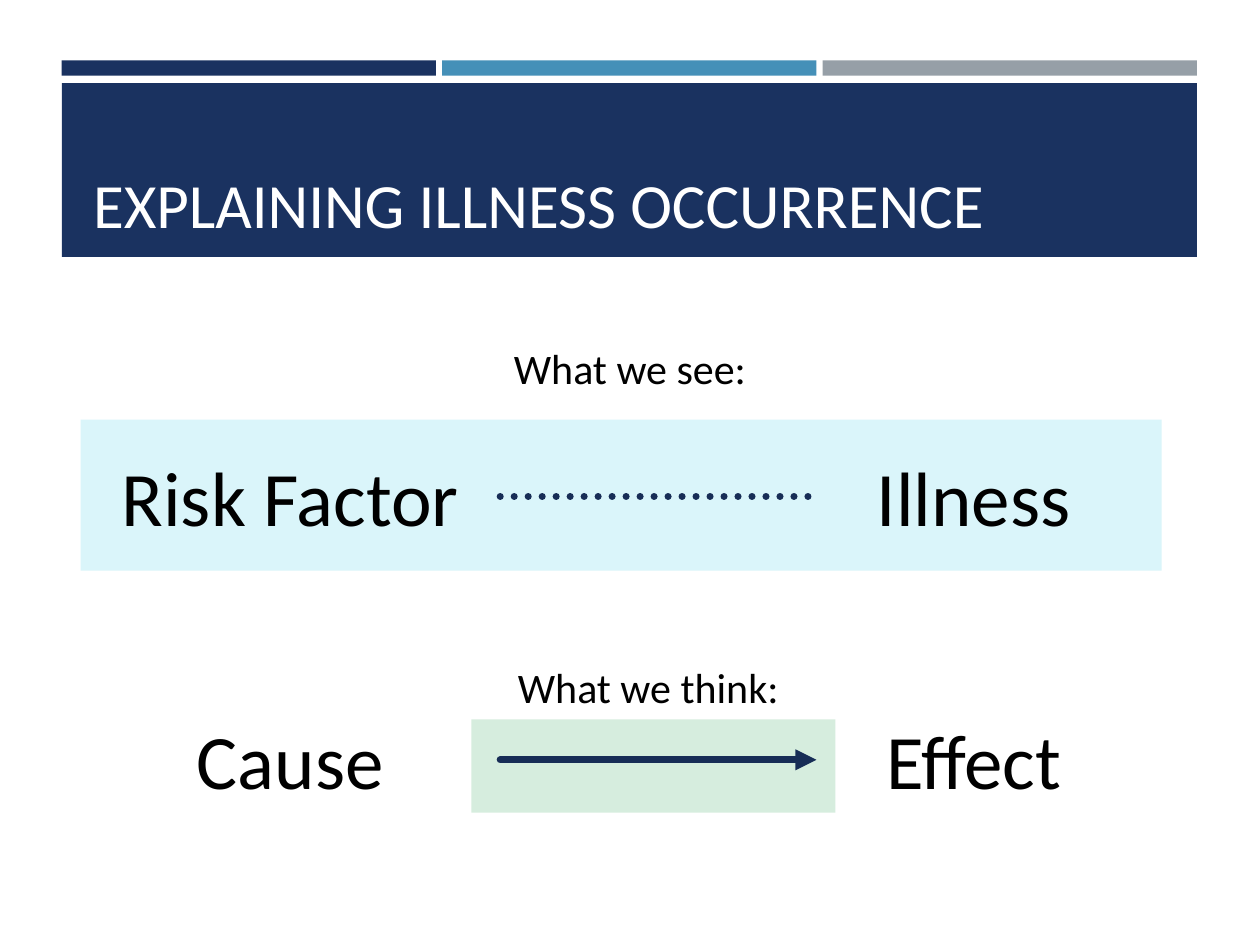
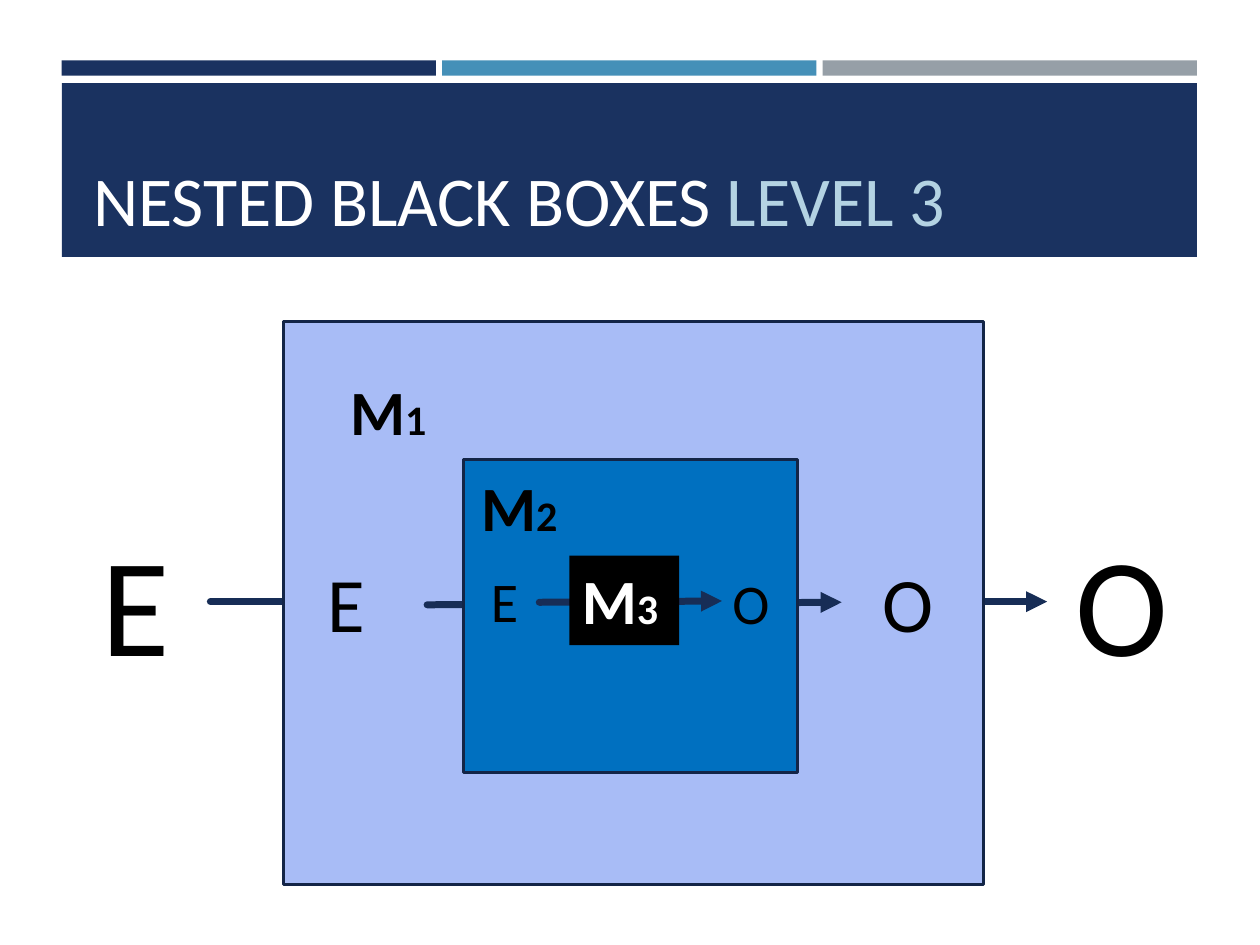
from lxml import etree
from pptx import Presentation
from pptx import util as u
from pptx.dml.color import RGBColor
from pptx.enum import dml, shapes, text
from pptx.oxml.ns import qn

PX = 9144  # EMU in one px, 100 px to the inch
FONT = "Calibri"

NAVY = RGBColor(0x1A, 0x32, 0x60)
BLUE = RGBColor(0x45, 0x90, 0xB8)
GREY = RGBColor(0x96, 0x9F, 0xA7)
LINE_NAVY = RGBColor(0x17, 0x2D, 0x56)
EDGE_NAVY = RGBColor(0x13, 0x25, 0x47)
PALE_CYAN = RGBColor(0xDA, 0xF5, 0xFA)
PALE_GREEN = RGBColor(0xD6, 0xED, 0xDE)
PERIWINKLE = RGBColor(0xA8, 0xBC, 0xF6)
STRONG_BLUE = RGBColor(0x00, 0x70, 0xC0)
PALE_BLUE = RGBColor(0xB4, 0xD3, 0xE3)
BLACK = RGBColor(0, 0, 0)
WHITE = RGBColor(255, 255, 255)

CENTER = text.PP_ALIGN.CENTER
LEFT = text.PP_ALIGN.LEFT


def px(*lengths):
    return [u.Emu(length * PX) for length in lengths]


def write(shape, runs, size, color=BLACK, bold=False, align=CENTER,
          anchor=text.MSO_ANCHOR.TOP, grow=True):
    """Fill a shape with one paragraph; a run is (text, own format)."""
    frame = shape.text_frame
    frame.word_wrap = True
    frame.vertical_anchor = anchor
    if grow:
        frame.auto_size = text.MSO_AUTO_SIZE.SHAPE_TO_FIT_TEXT
    paragraph = frame.paragraphs[0]
    paragraph.alignment = align
    for words, own in runs:
        run = paragraph.add_run()
        run.text = words
        run.font.name = FONT
        run.font.bold = bold
        run.font.size = u.Pt(own.get("size", size))
        run.font.color.rgb = own.get("color", color)


def add_label(slide, words, box, size, **formats):
    label = slide.shapes.add_textbox(*px(*box))
    runs = [(words, {})] if isinstance(words, str) else words
    write(label, runs, size, **formats)
    return label


def add_box(slide, box, fill, edge=None):
    shape = slide.shapes.add_shape(shapes.MSO_SHAPE.RECTANGLE, *px(*box))
    shape.shadow.inherit = False
    shape.fill.solid()
    shape.fill.fore_color.rgb = fill
    if edge is None:
        shape.line.fill.background()
    else:
        shape.line.color.rgb = edge
        shape.line.width = u.Pt(1.75)
    return shape


def add_line(slide, start, end, dotted=False):
    """Draw a dotted line or an arrow; each end is a point or a label to join."""
    line = slide.shapes.add_connector(shapes.MSO_CONNECTOR.STRAIGHT, 0, 0, 0, 0)
    if isinstance(start, tuple):
        line.begin_x, line.begin_y = px(*start)
        line.end_x, line.end_y = px(*end)
    else:
        line.begin_connect(start, 3)
        line.end_connect(end, 1)
    line.line.color.rgb = LINE_NAVY
    line.line.width = u.Pt(4)
    if dotted:
        line.line.dash_style = dml.MSO_LINE.ROUND_DOT
    properties = line._element.spPr
    outline = properties.find(qn("a:ln"))
    outline.set("cap", "rnd")
    if not dotted:
        etree.SubElement(outline, qn("a:tailEnd"), type="triangle")
    etree.SubElement(properties, qn("a:effectLst"))


def add_mechanism(shape, number, color=BLACK):
    write(shape, [("M", {}), (number, {"size": 24})], 36, color=color,
          bold=True, align=LEFT)


def add_titled_slide(presentation, title_runs, title_size):
    slide = presentation.slides.add_slide(presentation.slide_layouts[6])
    # Three thin strips over the title band
    for column, color in enumerate((NAVY, BLUE, GREY)):
        add_box(slide, (49 + column * 302, 48, 297, 12), color)
    add_box(slide, (49, 66, 901, 138), NAVY)
    title = slide.shapes.add_textbox(*px(64, 75, 874, 118))
    title.text_frame.margin_bottom = px(2)[0]
    write(title, title_runs, title_size, color=WHITE, align=LEFT,
          anchor=text.MSO_ANCHOR.BOTTOM, grow=False)
    return slide


def build_illness_slide(presentation):
    slide = add_titled_slide(
        presentation, [("EXPLAINING ILLNESS OCCURRENCE", {})], 36)

    # Highlights
    add_box(slide, (374, 571, 289, 74), PALE_GREEN)
    add_box(slide, (64, 333, 858, 120), PALE_CYAN)

    # Observed link, then assumed cause
    for left_words, right_words, top, dotted in (
            ("Risk Factor", "Illness", 352, True),
            ("Cause", "Effect", 561, False)):
        left = add_label(slide, left_words, (64, top, 333, 84), 44)
        right = add_label(slide, right_words, (648, top, 250, 84), 44)
        add_line(slide, left, right, dotted)

    # Captions
    add_label(slide, "What we see:", (390, 267, 220, 50), 24)
    add_label(slide, "What we think:", (397, 520, 235, 50), 24)


def build_nested_slide(presentation):
    slide = add_titled_slide(
        presentation,
        [("NESTED BLACK BOXES ", {}), ("LEVEL 3", {"color": PALE_BLUE})], 40)

    # Level 1: the outer box covers the middle of its arrow
    exposure = add_label(slide, "E", (48, 405, 119, 145), 80)
    outcome = add_label(slide, "O", (831, 405, 119, 145), 80)
    add_line(slide, exposure, outcome)
    add_box(slide, (225, 255, 556, 447), PERIWINKLE, EDGE_NAVY)
    add_mechanism(slide.shapes.add_textbox(*px(268, 291, 87, 71)), "1")

    # Level 2
    add_label(slide, "E", (237, 436, 75, 84), 44)
    add_label(slide, "O", (688, 436, 66, 84), 44)
    add_line(slide, (339, 480), (668, 478))
    add_box(slide, (368, 365, 265, 248), STRONG_BLUE, EDGE_NAVY)
    add_mechanism(slide.shapes.add_textbox(*px(372, 367, 87, 71)), "2")

    # Level 3
    add_label(slide, "E", (363, 445, 75, 64), 32)
    add_label(slide, "O", (563, 446, 66, 64), 32)
    add_line(slide, (428, 478), (573, 477))
    add_mechanism(add_box(slide, (452, 441, 87, 71), BLACK), "3", WHITE)


def main():
    presentation = Presentation()
    presentation.slide_width, presentation.slide_height = px(1000, 750)
    build_illness_slide(presentation)
    build_nested_slide(presentation)
    presentation.save("out.pptx")


if __name__ == "__main__":
    main()
